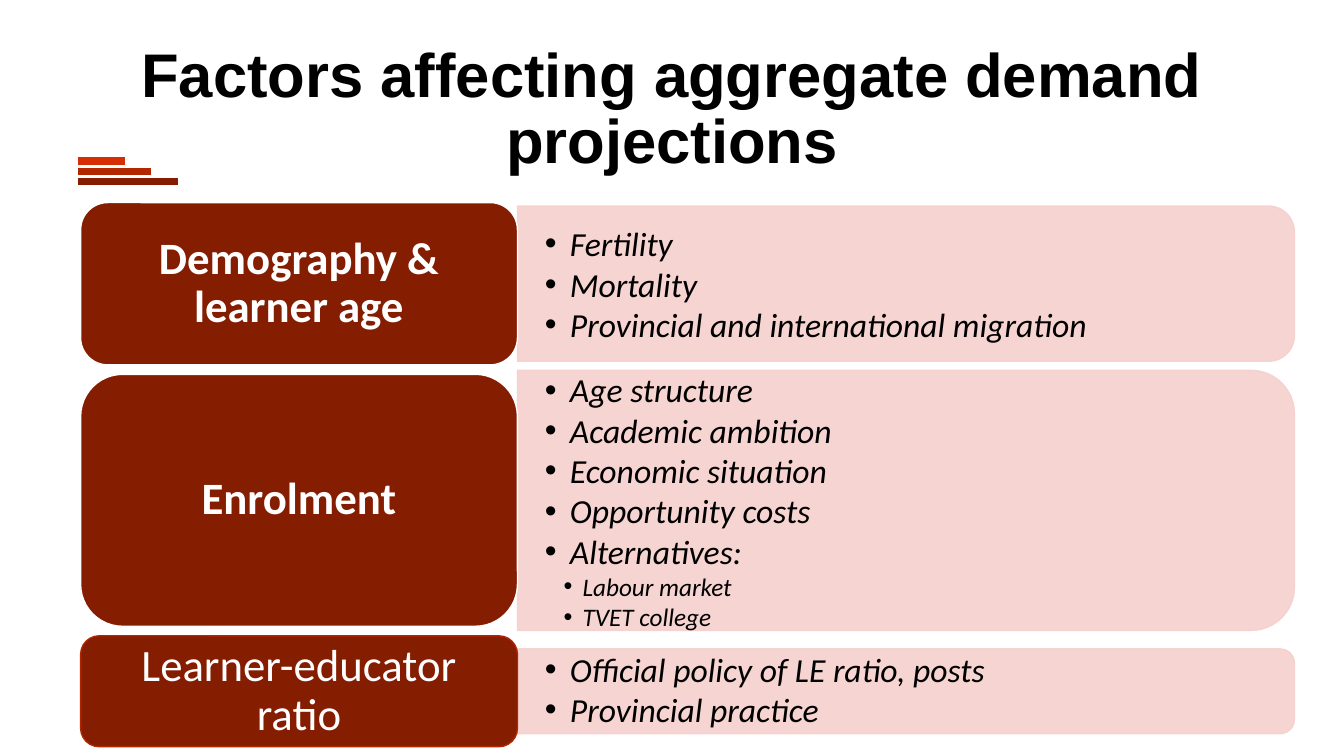
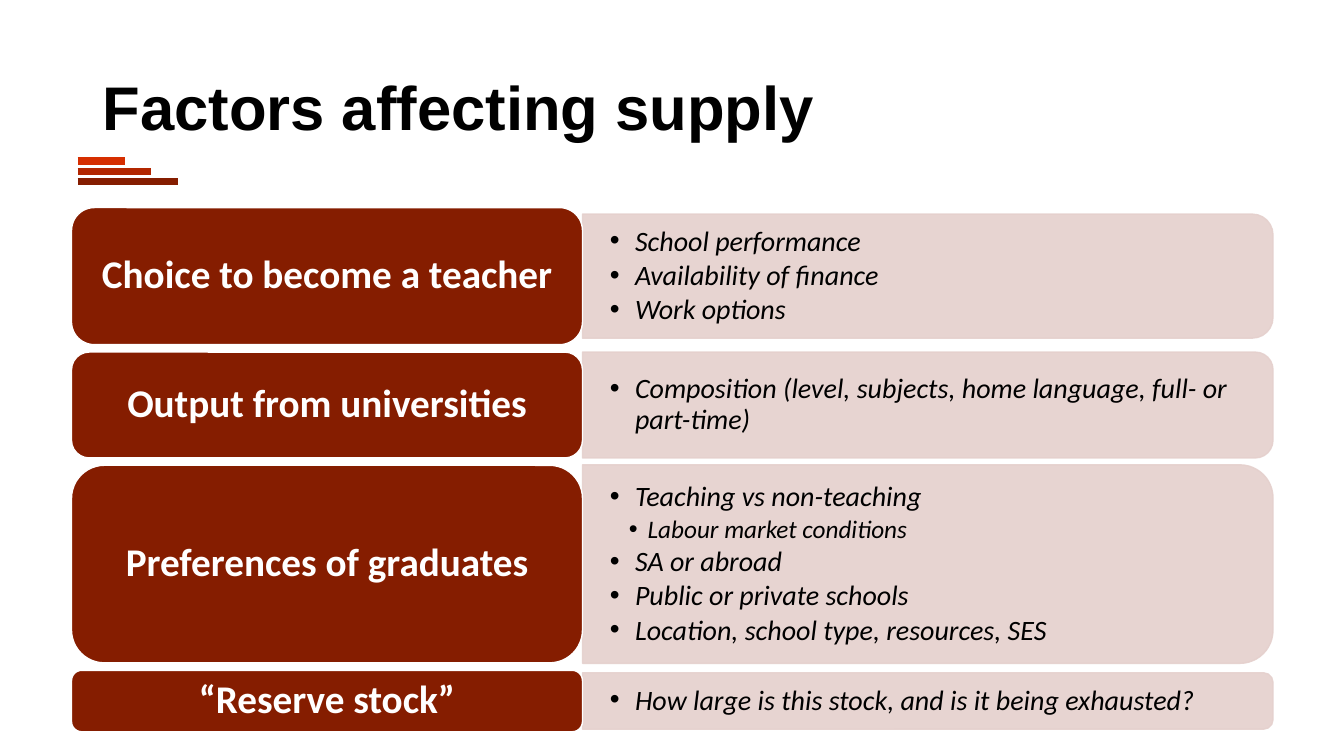
import pptx
import pptx.util
import pptx.dml.color
import pptx.enum.shapes
import pptx.enum.text
import pptx.oxml
import pptx.oxml.ns

Pt = pptx.util.Pt
RGBColor = pptx.dml.color.RGBColor
MSO_SHAPE = pptx.enum.shapes.MSO_SHAPE
PP_ALIGN = pptx.enum.text.PP_ALIGN

BLACK = RGBColor(0x00, 0x00, 0x00)
WHITE = RGBColor(0xFF, 0xFF, 0xFF)
MAROON = RGBColor(0x85, 0x1D, 0x00)
RUST = RGBColor(0xB2, 0x26, 0x00)
ORANGE = RGBColor(0xD6, 0x2E, 0x00)
PINK = RGBColor(0xF6, 0xD0, 0xCD)
ROSE = RGBColor(0xE5, 0xD0, 0xCD)

TITLE_BOX = (66.2, 26.6, 828, 104.4)
BAR_LEFT, BAR_TOP, BAR_STEP = 55.4, 115.2, 7.2
BARS = [(ORANGE, 33.9), (RUST, 52.6), (MAROON, 72)]
BULLET_INDENTS = {1: (18, -18), 2: (27, -13.5)}
SUB_BULLET_SIZE = 18
LOOSE = {"line_spacing": 1.0, "space_after": 0}
TIGHT = {"line_spacing": 0.9, "space_after": 2.8}

SLIDES = [
    {
        "title": "Factors affecting aggregate demand projections",
        "title_align": PP_ALIGN.CENTER,
        "left": 57.6, "top": 144.7, "gap": 6.8,
        "label_width": 312, "panel_width": 555, "panel_color": PINK,
        "label_size": 32, "bullet_size": 24,
        "rows": [
            {"label": "Demography & learner age", "heights": (115.9, 110.9), "spacing": LOOSE,
             "bullets": [(1, "Fertility"), (1, "Mortality"),
                         (1, "Provincial and international migration")]},
            {"label": "Enrolment", "heights": (180, 185.8), "spacing": LOOSE,
             "bullets": [(1, "Age structure"), (1, "Academic ambition"),
                         (1, "Economic situation"), (1, "Opportunity costs"),
                         (1, "Alternatives:"), (2, "Labour market"), (2, "TVET college")]},
            {"label": "Learner-educator ratio", "heights": (79.2, 60.5), "spacing": TIGHT,
             "bold": False, "outline": RUST,
             "bullets": [(1, "Official policy of LE ratio, posts"),
                         (1, "Provincial practice")]},
        ],
    },
    {
        "title": "Factors affecting supply",
        "title_align": PP_ALIGN.LEFT,
        "left": 51.1, "top": 148.3, "gap": 5.3,
        "label_width": 365, "panel_width": 493.2, "panel_color": ROSE,
        "label_size": 28, "bullet_size": 20,
        "rows": [
            {"label": "Choice to become a teacher", "heights": (97.9, 88.6), "spacing": TIGHT,
             "bullets": [(1, "School performance"), (1, "Availability of finance"),
                         (1, "Work options")]},
            {"label": "Output from universities", "heights": (75.6, 75.6), "spacing": TIGHT,
             "bullets": [(1, "Composition (level, subjects, home language, full- or part-time)")]},
            {"label": "Preferences of graduates", "heights": (141.1, 141.8), "spacing": TIGHT,
             "bullets": [(1, "Teaching vs non-teaching"), (2, "Labour market conditions"),
                         (1, "SA or abroad"), (1, "Public or private schools"),
                         (1, "Location, school type, resources, SES")]},
            {"label": "“Reserve stock”", "heights": (43.9, 40.3), "spacing": TIGHT,
             "bullets": [(1, "How large is this stock, and is it being exhausted?")]},
        ],
    },
]


def points(*values):
    return [Pt(value) for value in values]


def add_xml(parent, tag, **attributes):
    element = pptx.oxml.parse_xml(f"<a:{tag} {pptx.oxml.ns.nsdecls('a')}/>")
    for name, value in attributes.items():
        element.set(name, str(value))
    parent.append(element)


def prepare_frame(shape, insets):
    frame = shape.text_frame
    frame.word_wrap = True
    frame.vertical_anchor = pptx.enum.text.MSO_ANCHOR.MIDDLE
    frame.margin_left, frame.margin_top, frame.margin_right, frame.margin_bottom = points(*insets)
    return frame


def add_text(frame, text, size, color=BLACK, font="Calibri", bold=False, italic=False,
             align=PP_ALIGN.LEFT, line_spacing=0.9, space_after=0, level=0):
    paragraph = frame.paragraphs[0]
    if paragraph.runs:
        paragraph = frame.add_paragraph()
    paragraph.alignment = align
    paragraph.line_spacing = line_spacing
    paragraph.space_after = Pt(space_after)
    if level:
        paragraph.level = level
        margin, indent = BULLET_INDENTS[level]
        properties = paragraph._p.get_or_add_pPr()
        properties.set("marL", str(Pt(margin)))
        properties.set("indent", str(Pt(indent)))
        add_xml(properties, "buFont", typeface="Arial")
        add_xml(properties, "buChar", char="•")
    run = paragraph.add_run()
    run.text = text
    run.font.name = font
    run.font.size = Pt(size)
    run.font.bold = bold
    run.font.italic = italic
    run.font.color.rgb = color


def add_block(slide, kind, box, fill, outline):
    shape = slide.shapes.add_shape(kind, *points(*box))
    shape.shadow.inherit = False
    shape.fill.solid()
    shape.fill.fore_color.rgb = fill
    shape.line.color.rgb = outline
    shape.line.width = Pt(1)
    return shape


def add_header(slide, title, align):
    for index, (color, length) in enumerate(BARS):
        y = BAR_TOP + index * BAR_STEP
        bar = slide.shapes.add_connector(pptx.enum.shapes.MSO_CONNECTOR.STRAIGHT,
                                         *points(BAR_LEFT, y, BAR_LEFT + length, y))
        bar.line.color.rgb = color
        bar.line.width = Pt(5.5)
        add_xml(bar._element.spPr, "effectLst")
    title_box = slide.shapes.add_textbox(*points(*TITLE_BOX))
    add_text(prepare_frame(title_box, (7.2, 3.6, 7.2, 3.6)), title, size=44,
             font="Arial", bold=True, align=align)


def add_panel(slide, left, middle, width, height, color):
    box = (left + (width - height) / 2, middle - width / 2, height, width)
    panel = add_block(slide, MSO_SHAPE.ROUND_2_SAME_RECTANGLE, box, color, color)
    panel.rotation = 90
    for solid_color in panel._element.spPr.iter(pptx.oxml.ns.qn("a:srgbClr")):
        add_xml(solid_color, "alpha", val=90000)


def add_row(slide, content, row, top):
    label_height, panel_height = row["heights"]
    middle = top + label_height / 2
    panel_left = content["left"] + content["label_width"]
    panel_width = content["panel_width"]
    add_panel(slide, panel_left, middle, panel_width, panel_height, content["panel_color"])

    bullet_box = slide.shapes.add_textbox(
        *points(panel_left, middle - panel_height / 2, panel_width, panel_height))
    frame = prepare_frame(bullet_box, (19.5, 0, 23, 0))
    for level, text in row["bullets"]:
        size = content["bullet_size"] if level == 1 else SUB_BULLET_SIZE
        add_text(frame, text, size=size, italic=True, level=level, **row["spacing"])

    label_box = (content["left"], top, content["label_width"], label_height)
    label = add_block(slide, MSO_SHAPE.ROUNDED_RECTANGLE, label_box, MAROON,
                      row.get("outline", WHITE))
    add_text(prepare_frame(label, (9, 5, 9, 5)), row["label"], size=content["label_size"],
             color=WHITE, bold=row.get("bold", True), align=PP_ALIGN.CENTER)


def main():
    presentation = pptx.Presentation()
    presentation.slide_width, presentation.slide_height = points(960, 540)
    for content in SLIDES:
        slide = presentation.slides.add_slide(presentation.slide_layouts[6])
        add_header(slide, content["title"], content["title_align"])
        top = content["top"]
        for row in content["rows"]:
            add_row(slide, content, row, top)
            top += row["heights"][0] + content["gap"]
    presentation.save("out.pptx")


if __name__ == "__main__":
    main()
